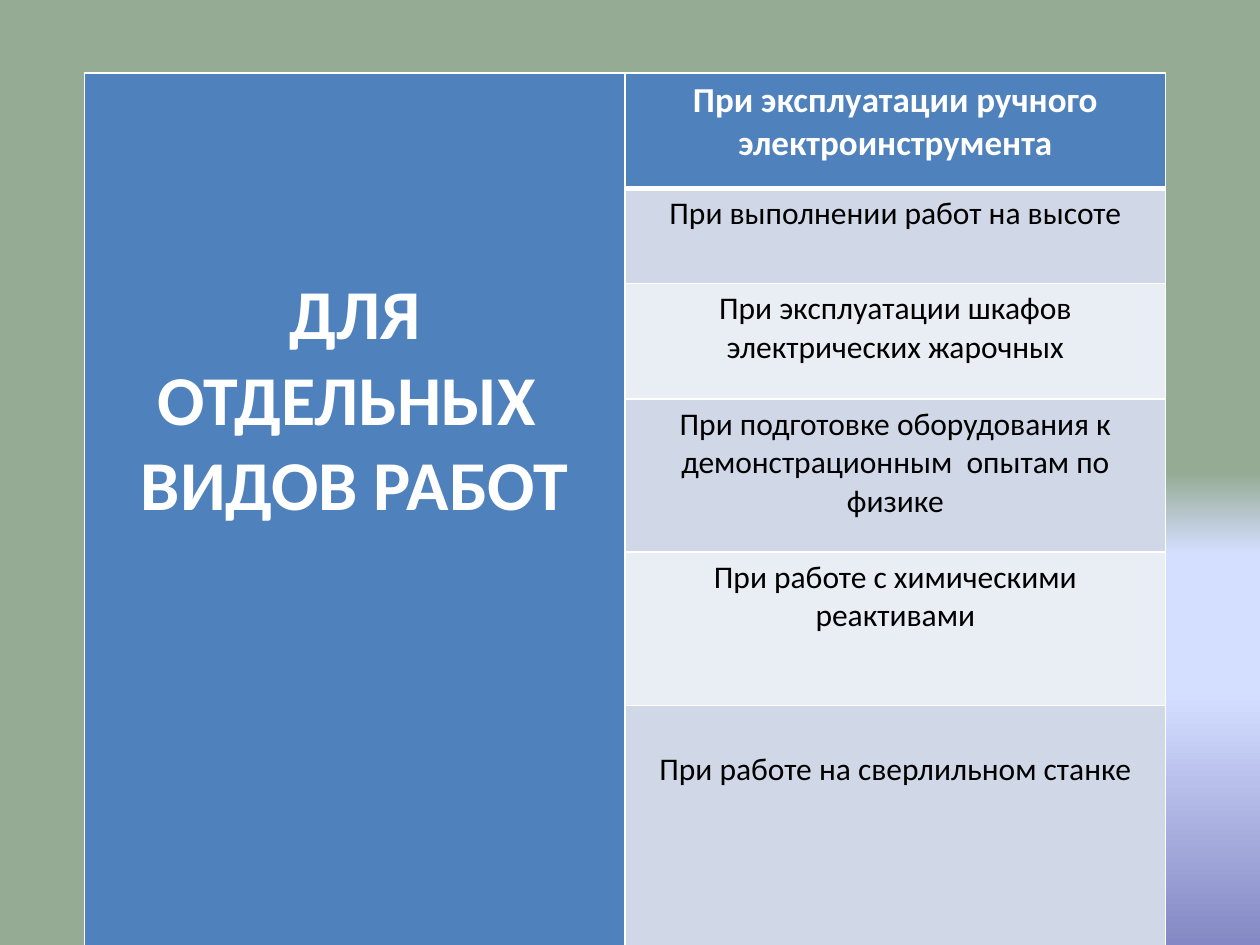
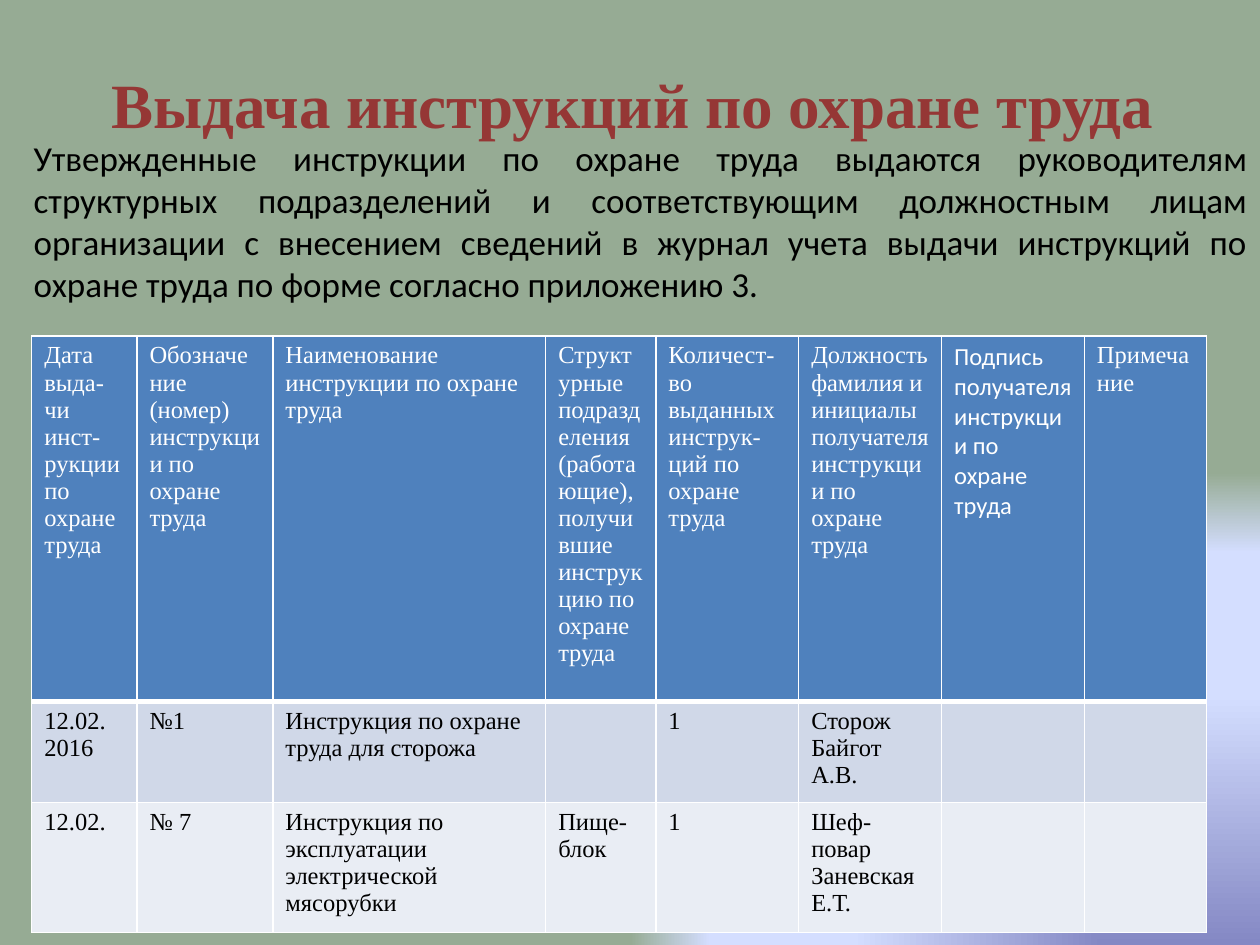
"""Build two slides on issuing work safety instructions."""
from lxml.etree import SubElement
from pptx import Presentation
from pptx.dml.color import RGBColor
from pptx.enum.text import MSO_ANCHOR, PP_ALIGN
from pptx.oxml import parse_xml
from pptx.oxml.ns import nsdecls, qn
from pptx.util import Cm, Pt

HUES = {"head": "4F81BD", "odd": "D0D8E8", "even": "E9EDF4", "line": "FFFFFF",
        "light": "FFFFFF", "dark": "000000", "title": "953735"}
STOPS = [(0, "8488C4"), (53, "D4DEFF"), (83, "D4DEFF"), (100, "96AB94")]
SANS, SERIF = "Calibri", "Times New Roman"

WORKS = [
    ["ДЛЯ ОТДЕЛЬНЫХ \nВИДОВ РАБОТ", "При эксплуатации ручного электроинструмента"],
    ["", "При выполнении работ на высоте"],
    ["", "При эксплуатации шкафов электрических жарочных"],
    ["", "При подготовке оборудования к демонстрационным  опытам по физике"],
    ["", "При работе с химическими реактивами"],
    ["", "При работе на сверлильном станке"],
]
WORK_COLS = [10.9, 10.9]
WORK_ROWS = [2.33, 1.91, 2.33, 3.09, 3.09, 3.09]

TITLE = "Выдача инструкций по охране труда "
INTRO = ("Утвержденные инструкции по охране труда выдаются руководителям "
         "структурных подразделений и соответствующим должностным лицам "
         "организации с внесением сведений в журнал учета выдачи инструкций "
         "по охране труда по форме согласно приложению 3.")
LOG = [
    ["Дата выда-\nчи инст-рукции по охране труда",
     "Обозначение (номер) инструкции по охране труда",
     "Наименование инструкции по охране труда",
     "Структурные подразделения (работающие), получившие инструкцию по охране труда",
     "Количест-во выданных инструк-ций по охране труда",
     "Должность фамилия и инициалы получателя инструкции по охране труда",
     "Подпись получателя инструкции по охране труда",
     "Примечание"],
    ["12.02.\n2016", "№1", "Инструкция по охране труда для сторожа", "", "1",
     "Сторож\nБайгот А.В.", "", ""],
    ["12.02.", "№ 7", "Инструкция по эксплуатации электрической мясорубки",
     "Пище-блок", "1", "Шеф-повар Заневская Е.Т.", "", ""],
]
LOG_COLS = [2.12, 2.74, 5.5, 2.22, 2.88, 2.88, 2.88, 2.46]
LOG_ROWS = [7.36, 2.03, 2.62]
SIGN_COL = 6


def style(frame, size, hue, face=SANS, bold=False, align=PP_ALIGN.LEFT):
    for para in frame.paragraphs:
        para.alignment = align
        for run in para.runs:
            font = run.font
            font.size, font.name, font.bold = Pt(size), face, bold
            font.color.rgb = RGBColor.from_string(HUES[hue])


def paint(deck):
    stops = "".join(f'<a:gs pos="{pos * 1000}"><a:srgbClr val="{hue}"/></a:gs>'
                    for pos, hue in STOPS)
    back = parse_xml(
        f'<p:bg {nsdecls("p", "a")}><p:bgPr><a:gradFill rotWithShape="1">'
        f'<a:gsLst>{stops}</a:gsLst><a:path path="rect">'
        '<a:fillToRect l="100000" t="100000"/></a:path></a:gradFill>'
        '<a:effectLst/></p:bgPr></p:bg>')
    base = deck.slide_master.element.cSld
    for old in base.findall(qn("p:bg")):
        base.remove(old)
    base.insert(0, back)


def edge(cell, row):
    props = cell._tc.get_or_add_tcPr()
    for side in "LRTB":
        thick = (side, row) in (("B", 0), ("T", 1))
        line = SubElement(props, qn(f"a:ln{side}"), w=str(Pt(3 if thick else 1)))
        fill = SubElement(line, qn("a:solidFill"))
        SubElement(fill, qn("a:srgbClr"), val=HUES["line"])


def grid(slide, data, left, top, cols, rows):
    frame = slide.shapes.add_table(len(rows), len(cols), Cm(left), Cm(top),
                                   Cm(sum(cols)), Cm(sum(rows)))
    table = frame.table
    for col, width in zip(table.columns, cols):
        col.width = Cm(width)
    for row, height in zip(table.rows, rows):
        row.height = Cm(height)
    for r, line in enumerate(data):
        hue = "head" if r == 0 else "odd" if r % 2 else "even"
        for c, text in enumerate(line):
            cell = table.cell(r, c)
            cell.text_frame.text = text
            edge(cell, r)
            cell.fill.solid()
            cell.fill.fore_color.rgb = RGBColor.from_string(HUES[hue])
    return table


def show_works(deck):
    slide = deck.slides.add_slide(deck.slide_layouts[6])
    table = grid(slide, WORKS, 1.7, 1.47, WORK_COLS, WORK_ROWS)
    lead, last = table.cell(0, 0), table.cell(len(WORKS) - 1, 1)
    lead.merge(table.cell(len(WORKS) - 1, 0))
    lead.margin_top, last.margin_top = Cm(4.04), Cm(0.9)
    style(lead.text_frame, 40, "light", bold=True, align=PP_ALIGN.CENTER)
    for r in range(len(WORKS)):
        head = r == 0
        style(table.cell(r, 1).text_frame, 20 if head else 18,
              "light" if head else "dark", bold=head, align=PP_ALIGN.CENTER)


def show_log(deck):
    slide = deck.slides.add_slide(deck.slide_layouts[5])
    title = slide.shapes.title
    title.left, title.top, title.width, title.height = Cm(0.43), Cm(1.2), Cm(24.97), Cm(1.55)
    title.text_frame.text = TITLE
    title.text_frame.vertical_anchor = MSO_ANCHOR.TOP
    style(title.text_frame, 36, "title", SERIF, True, PP_ALIGN.CENTER)

    intro = slide.shapes.add_textbox(Cm(0.43), Cm(2.63), Cm(24.97), Cm(3.7)).text_frame
    intro.word_wrap = True
    intro.text = INTRO
    style(intro, 20, "dark", align=PP_ALIGN.JUSTIFY)

    table = grid(slide, LOG, 0.64, 6.77, LOG_COLS, LOG_ROWS)
    for r, line in enumerate(LOG):
        for c in range(len(line)):
            style(table.cell(r, c).text_frame, 14, "dark" if r else "light",
                  SANS if c == SIGN_COL else SERIF)


def main():
    deck = Presentation()
    deck.slide_width, deck.slide_height = Cm(25.4), Cm(19.05)
    paint(deck)
    show_works(deck)
    show_log(deck)
    deck.save("out.pptx")


if __name__ == "__main__":
    main()
